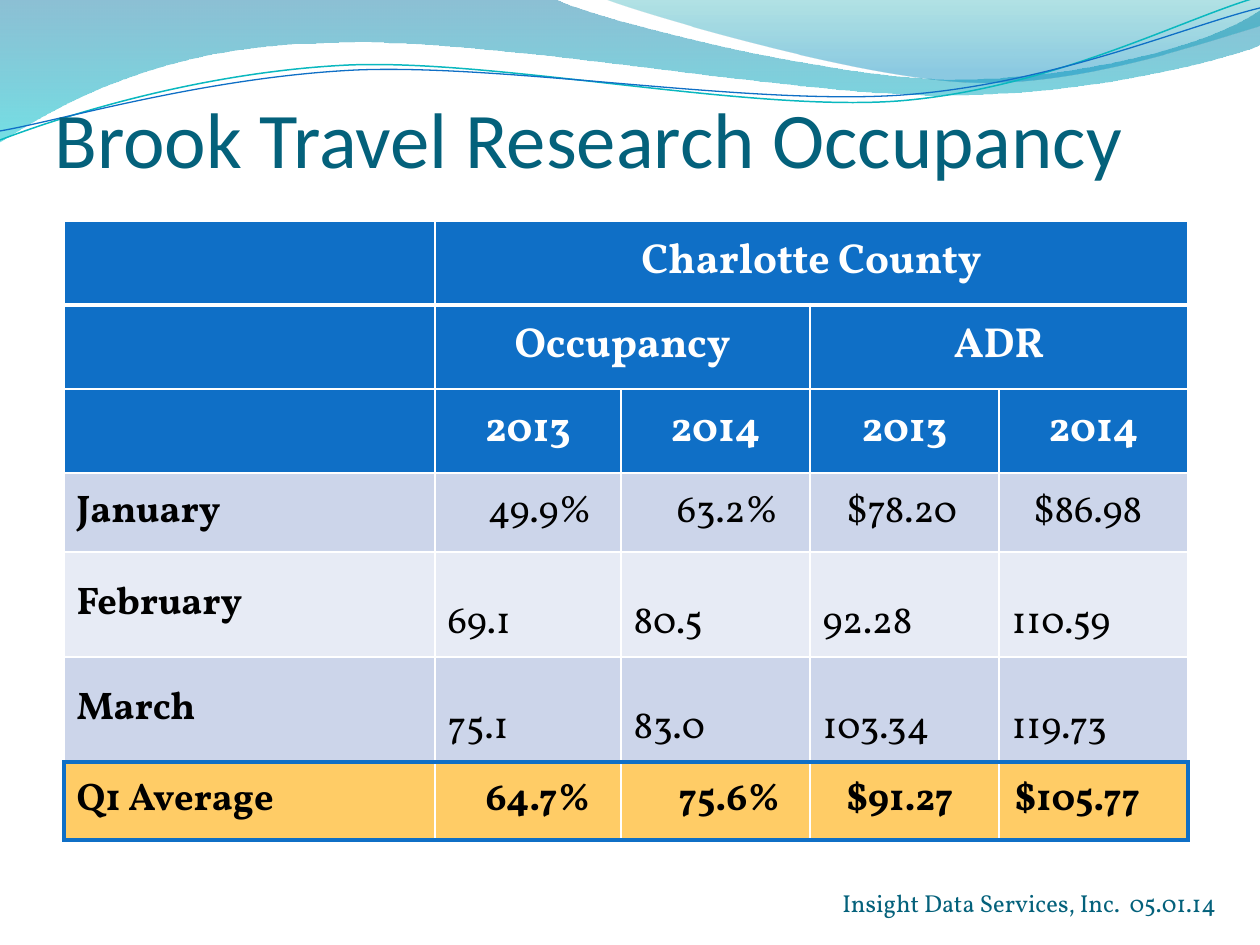
"""Build the Charlotte County occupancy and ADR slide."""
from lxml import etree
from pptx import Presentation
from pptx.dml.color import RGBColor
from pptx.enum.text import MSO_ANCHOR, PP_ALIGN
from pptx.oxml.ns import qn
from pptx.util import Emu, Pt

LEFT, CENTER, RIGHT = PP_ALIGN.LEFT, PP_ALIGN.CENTER, PP_ALIGN.RIGHT
MIDDLE, BOTTOM = MSO_ANCHOR.MIDDLE, MSO_ANCHOR.BOTTOM
PX = 914400 / 126
THEME = {
    "ink": "04617B", "blue": "0F6FC6", "teal": "0AB8BF", "white": "FFFFFF", "black": "000000",
    "band": "CCD5EA", "pale": "E7EBF5", "gold": "FFCC66",
    "wave": [(0, "0074A1", 45), (1, "00C6CF", 55)],
    "crest": [(0, "00A1A9", 30), (0.8, "008BBF", 45)],
    "heading": "Calibri", "body": "Vollkorn",
    "title_size": 45, "head_size": 24, "row_size": 22, "footer_size": 14,
}


def write(paragraph, text, color, align=LEFT, **font_format):
    paragraph.alignment = align
    run = paragraph.add_run()
    run.text = text
    run.font.color.rgb = RGBColor.from_string(THEME[color])
    for attribute, value in font_format.items():
        setattr(run.font, attribute, value)


def draw_curve(shapes, start, steps, close):
    points = [pair for step in steps for pair in zip(step[::2], step[1::2])]
    builder = shapes.build_freeform(*(round(v * PX) for v in start))
    builder.add_line_segments([(round(x * PX), round(y * PX)) for x, y in points], close=close)
    curve = builder.convert_to_shape()
    curve.shadow.inherit = False
    segments = iter(list(curve._element.iter(qn("a:lnTo"))))
    for step in steps:
        segment = next(segments)
        if len(step) == 6:
            bezier = etree.Element(qn("a:cubicBezTo"))
            segment.addprevious(bezier)
            for part in (segment, next(segments), next(segments)):
                bezier.append(part[0])
                part.getparent().remove(part)
    return curve


prs = Presentation()
prs.slide_width, prs.slide_height = Emu(round(1260 * PX)), Emu(round(945 * PX))
slide = prs.slides.add_slide(prs.slide_layouts[6])
shapes = slide.shapes

swooshes = [
    ("wave", (0, 0), [(554, -1), (600, 21, 837, 79, 955, 79), (1075, 79, 1207, 47, 1260, 11),
                      (1261, 45), (1239, 55, 1096, 96, 940, 95), (784, 95, 481, 35, 324, 43),
                      (163, 45, 58, 105, -1, 142)]),
    ("crest", (604, -1), [(641, 14, 859, 78, 969, 82), (1079, 87, 1211, 40, 1260, 26), (1260, 0)]),
]
for gradient, start, steps in swooshes:
    swoosh = draw_curve(shapes, start, steps, True)
    swoosh.line.fill.background()
    swoosh.fill.gradient()
    swoosh.fill.gradient_angle = 270
    for stop, (position, color, _) in zip(swoosh.fill.gradient_stops, THEME[gradient]):
        stop.position = position
        stop.color.rgb = RGBColor.from_string(color)
    tints = swoosh._element.spPr.iter(qn("a:srgbClr"))
    for tint, (_, _, opacity) in zip(list(tints), THEME[gradient]):
        etree.SubElement(tint, qn("a:alpha"), val=str(opacity * 1000))

ripples = [
    ("teal", 0.85, (0, 140), [(60, 117, 199, 72, 349, 65), (498, 59, 747, 112, 898, 101),
                              (1050, 89, 1182, 19, 1258, -3)]),
    ("blue", 0.75, (0, 131), [(59, 121, 207, 77, 357, 70), (508, 64, 752, 106, 903, 95),
                              (1053, 84, 1186, 26, 1260, 8)]),
]
for color, width, start, steps in ripples:
    ripple = draw_curve(shapes, start, steps, False)
    ripple.fill.background()
    ripple.line.color.rgb = RGBColor.from_string(THEME[color])
    ripple.line.width = Pt(width)

captions = [
    ((798, 882, 431, 43), "Insight Data Services, Inc.  05.01.14", RIGHT, "body", "footer_size"),
    ((42, 84, 1144, 158), "Brook Travel Research Occupancy", LEFT, "heading", "title_size"),
]
for box, text, align, face, size in captions:
    frame = shapes.add_textbox(*(Emu(round(v * PX)) for v in box)).text_frame
    frame.word_wrap = True
    write(frame.paragraphs[0], text, "ink", align, name=THEME[face], size=Pt(THEME[size]))

column_widths = [371, 186, 189, 189, 189]
row_heights = [84, 84, 84, 79, 105, 105, 78]
rows = [
    ["", "Charlotte County", "", "", ""],
    ["", "Occupancy", "", "ADR", ""],
    ["", "2013", "2014", "2013", "2014"],
    ["January", "49.9%", "63.2%", "$78.20", "$86.98"],
    ["February", "69.1", "80.5", "92.28", "110.59"],
    ["March", "75.1", "83.0", "103.34", "119.73"],
    ["Q1 Average", "64.7%", "75.6%", "$91.27", "$105.77"],
]
row_fills = ["blue"] * 3 + ["band", "pale", "band", "gold"]
table_box = (64, 221, sum(column_widths), sum(row_heights))
table = shapes.add_table(7, 5, *(Emu(round(v * PX)) for v in table_box)).table
for column, width in zip(table.columns, column_widths):
    column.width = Emu(round(width * PX))
for row, height in zip(table.rows, row_heights):
    row.height = Emu(round(height * PX))
for row, first, last in [(0, 1, 4), (1, 1, 2), (1, 3, 4)]:
    table.cell(row, first).merge(table.cell(row, last))

for r, values in enumerate(rows):
    for c, value in enumerate(values):
        cell = table.cell(r, c)
        heading, figure = r < 3, r >= 3 and c > 0
        lowered = figure and r in (4, 5)
        cell.vertical_anchor = BOTTOM if lowered else MIDDLE
        edges = {side: ("white", 1) for side in ("lnL", "lnR", "lnT", "lnB")}
        if r < 2:
            edges["lnB" if r == 0 else "lnT"] = ("white", 3)
        framed = {"lnL": r == 6 and c == 0, "lnR": r == 6 and c == 4, "lnT": r == 6, "lnB": r >= 5}
        edges.update({side: ("blue", 2.25) for side, on in framed.items() if on})
        properties = cell._tc.get_or_add_tcPr()
        for side, (color, width) in edges.items():
            border = etree.SubElement(properties, qn(f"a:{side}"), w=str(Pt(width)))
            paint = etree.SubElement(border, qn("a:solidFill"))
            etree.SubElement(paint, qn("a:srgbClr"), val=THEME[color])
        cell.fill.solid()
        cell.fill.fore_color.rgb = RGBColor.from_string(THEME[row_fills[r]])
        if not value:
            continue
        paragraph = cell.text_frame.paragraphs[0]
        tabbed = figure and not lowered
        if tabbed:
            tabs = etree.SubElement(paragraph._p.get_or_add_pPr(), qn("a:tabLst"))
            etree.SubElement(tabs, qn("a:tab"), pos=str(round(82 * PX)), algn="dec")
        write(paragraph, f"\t{value}" if tabbed else value, "white" if heading else "black",
              CENTER if heading else LEFT, name=THEME["body"],
              size=Pt(THEME["head_size" if heading else "row_size"]), bold=not figure or r == 6)

prs.save("out.pptx")
